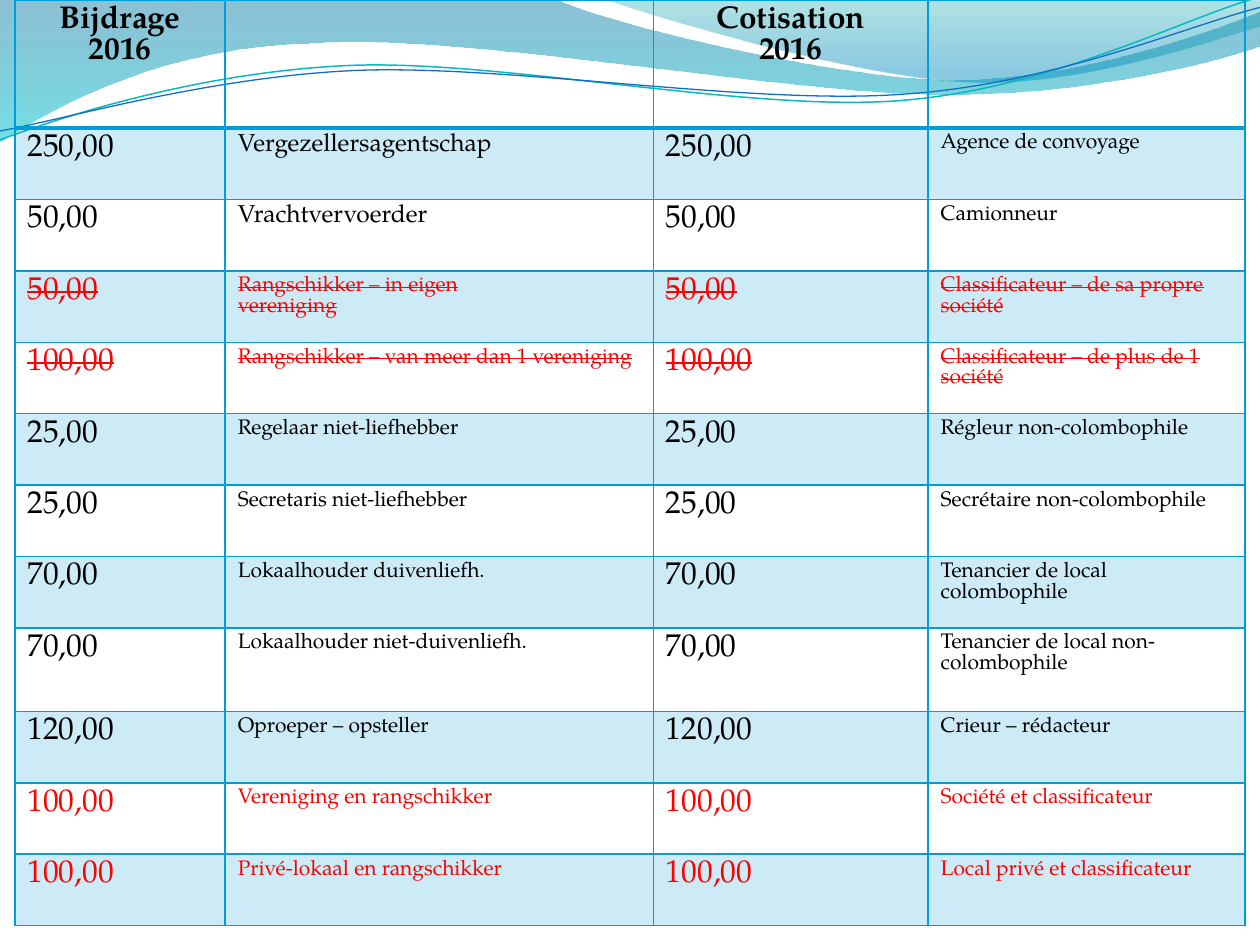
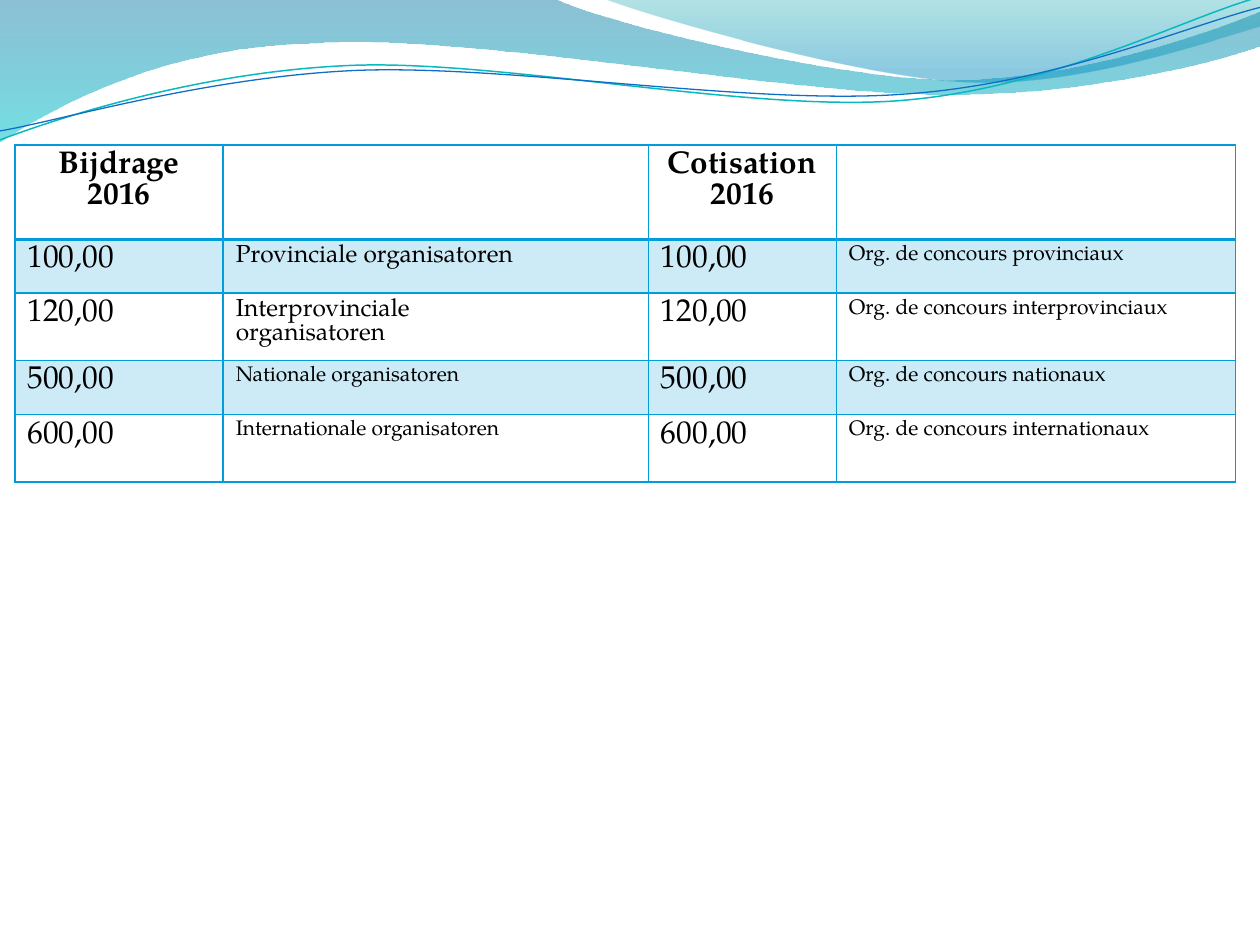
import math
from dataclasses import dataclass

from lxml import etree
from pptx import Presentation
from pptx import util as u
from pptx.dml.color import RGBColor
from pptx.enum import text
from pptx.oxml.ns import qn


@dataclass(frozen=True)
class Theme:
    font: str = "TeX Gyre Pagella"
    ink: str = "000000"
    changed: str = "FF0000"
    grid: str = "009DD9"
    band_opacity: int = 20
    amount_size: int = 18
    lead_size: int = 14
    label_size: int = 12
    leading: float = 0.98
    thin: float = 1
    thick: float = 2


THEME = Theme()
KEPT, STRUCK, ADDED = "kept", "struck", "added"

# Wave outlines in cm: a start, then legs of one point (straight) or three (curve).
# Gradient stops are position, colour and opacity, from top to bottom.
FILLED_WAVES = [
    ((0, 0),
     [[(11.18, -0.03)],
      [(12.09, 0.43), (16.87, 1.6), (19.25, 1.6)],
      [(21.67, 1.6), (24.33, 0.66), (25.4, 0.23)],
      [(25.43, 0.91)],
      [(24.97, 1.12), (22.1, 1.93), (18.95, 1.9)],
      [(15.8, 1.9), (9.7, 0.71), (6.53, 0.86)],
      [(3.28, 0.91), (1.17, 2.11), (-0.03, 2.87)]],
     [(0, "0074A1", 45), (1, "00C6CF", 55)]),
    ((12.17, -0.03),
     [[(12.93, 0.28), (17.32, 1.57), (19.53, 1.65)],
      [(21.74, 1.75), (24.41, 0.81), (25.4, 0.53)],
      [(25.4, 0)]],
     [(0, "00A1A9", 30), (0.8, "008BBF", 45)]),
]
# Thin waves are tilted shapes: start, legs, centre of the tilt, colour and width.
TILT = -2.7
LINE_WAVES = [
    ((0, 2.82),
     [[(1.22, 2.36), (4.01, 1.45), (7.04, 1.32)],
      [(10.03, 1.19), (15.06, 2.26), (18.11, 2.03)],
      [(21.16, 1.8), (23.83, 0.38), (25.35, -0.05)]],
     (12.67, 1.46), "0AB8BF", 0.85),
    ((0, 2.64),
     [[(1.19, 2.44), (4.17, 1.55), (7.19, 1.42)],
      [(10.24, 1.3), (15.16, 2.13), (18.21, 1.9)],
      [(21.23, 1.7), (23.9, 0.53), (25.4, 0.15)]],
     (12.69, 1.5), "0F6FC6", 0.75),
]

HEADINGS = ["Bijdrage\n2016", "", "Cotisation\n2016", ""]
MEMBER_FEES = [
    ("250,00", "Vergezellersagentschap", "Agence de convoyage", KEPT),
    ("50,00", "Vrachtvervoerder", "Camionneur", KEPT),
    ("50,00", "Rangschikker – in eigen\nvereniging",
     "Classificateur – de sa propre société", STRUCK),
    ("100,00", "Rangschikker – van meer dan 1 vereniging",
     "Classificateur – de plus de 1 société", STRUCK),
    ("25,00", "Regelaar niet-liefhebber", "Régleur non-colombophile", KEPT),
    ("25,00", "Secretaris niet-liefhebber", "Secrétaire non-colombophile", KEPT),
    ("70,00", "Lokaalhouder duivenliefh.", "Tenancier de local colombophile", KEPT),
    ("70,00", "Lokaalhouder niet-duivenliefh.",
     "Tenancier de local non-colombophile", KEPT),
    ("120,00", "Oproeper – opsteller", "Crieur – rédacteur", KEPT),
    ("100,00", "Vereniging en rangschikker", "Société et classificateur", ADDED),
    ("100,00", "Privé-lokaal en rangschikker", "Local privé et classificateur", ADDED),
]
ORGANISER_FEES = [
    ("100,00", "Provinciale organisatoren", "Org. de concours provinciaux", KEPT),
    ("120,00", "Interprovinciale\norganisatoren",
     "Org. de concours interprovinciaux", KEPT),
    ("500,00", "Nationale organisatoren", "Org. de concours nationaux", KEPT),
    ("600,00", "Internationale organisatoren", "Org. de concours internationaux", KEPT),
]


def set_opacity(color_element, percent):
    etree.SubElement(color_element, qn("a:alpha"), val=str(percent * 1000))


# Waves
def turn(point, centre, degrees):
    angle = math.radians(degrees)
    x, y = point[0] - centre[0], point[1] - centre[1]
    return (centre[0] + x * math.cos(angle) - y * math.sin(angle),
            centre[1] + x * math.sin(angle) + y * math.cos(angle))


def add_outline(page, start, legs, close):
    """Build a freeform, then make each leg of three points one Bézier curve."""
    builder = page.shapes.build_freeform(u.Cm(start[0]), u.Cm(start[1]))
    points = [(u.Cm(x), u.Cm(y)) for leg in legs for x, y in leg]
    builder.add_line_segments(points, close=close)
    wave = builder.convert_to_shape()
    wave.shadow.inherit = False
    outline = next(wave.element.iter(qn("a:path")))
    segments = iter(outline.findall(qn("a:lnTo")))
    for leg in legs:
        curve, *others = [next(segments) for _ in leg]
        if others:
            curve.tag = qn("a:cubicBezTo")
        for segment in others:
            curve.append(segment[0])
            outline.remove(segment)
    return wave


def add_waves(page, layout):
    """Draw the waves and hand them to the layout that all slides share."""
    waves = []
    for start, legs, stops in FILLED_WAVES:
        wave = add_outline(page, start, legs, True)
        wave.line.fill.background()
        wave.fill.gradient()
        wave.fill.gradient_angle = 270
        for stop, (position, color, _) in zip(wave.fill.gradient_stops, stops):
            stop.position = position
            stop.color.rgb = RGBColor.from_string(color)
        colors = wave.element.spPr.iter(qn("a:srgbClr"))
        for element, (_, _, opacity) in zip(list(colors), stops):
            set_opacity(element, opacity)
        waves.append(wave)
    for start, legs, centre, color, width in LINE_WAVES:
        level_legs = [[turn(point, centre, -TILT) for point in leg] for leg in legs]
        wave = add_outline(page, turn(start, centre, -TILT), level_legs, False)
        wave.rotation = TILT
        wave.fill.background()
        wave.line.color.rgb = RGBColor.from_string(color)
        wave.line.width = u.Pt(width)
        waves.append(wave)
    for placeholder in list(layout.placeholders):
        layout.shapes.element.remove(placeholder.element)
    for wave in waves:
        layout.shapes.element.append(wave.element)


# Fee tables
def set_borders(cell, top, bottom):
    properties = cell._tc.get_or_add_tcPr()
    widths = {"a:lnL": THEME.thin, "a:lnR": THEME.thin, "a:lnT": top, "a:lnB": bottom}
    for index, (tag, width) in enumerate(widths.items()):
        line = etree.Element(qn(tag), w=str(u.Pt(width)))
        fill = etree.SubElement(line, qn("a:solidFill"))
        etree.SubElement(fill, qn("a:srgbClr"), val=THEME.grid)
        properties.insert(index, line)


def shade(cell, banded):
    if not banded:
        cell.fill.background()
        return
    cell.fill.solid()
    cell.fill.fore_color.rgb = RGBColor.from_string(THEME.grid)
    set_opacity(next(cell._tc.tcPr.iter(qn("a:srgbClr"))), THEME.band_opacity)


def write(cell, words, size, state=KEPT, heading=False):
    cell.text = words
    for para in cell.text_frame.paragraphs:
        para.line_spacing = u.Pt(size * THEME.leading)
        para.alignment = text.PP_ALIGN.CENTER if heading else text.PP_ALIGN.LEFT
        font = para.font
        font.name, font.size, font.bold = THEME.font, u.Pt(size), heading
        font.color.rgb = RGBColor.from_string(THEME.ink if state == KEPT else THEME.changed)
        if state == STRUCK:
            para._p.pPr.find(qn("a:defRPr")).set("strike", "sngStrike")


def add_fee_table(page, left, top, widths, heights, fees):
    frame = page.shapes.add_table(
        len(heights), len(widths), u.Cm(left), u.Cm(top),
        u.Cm(sum(widths)), u.Cm(sum(heights)))
    table = frame.table
    table.first_row = table.horz_banding = False
    for column, width in zip(table.columns, widths):
        column.width = u.Cm(width)
    for row, height in zip(table.rows, heights):
        row.height = u.Cm(height)

    for column, heading in enumerate(HEADINGS):
        write(table.cell(0, column), heading, THEME.amount_size, heading=True)
    for row, (amount, dutch, french, state) in enumerate(fees, start=1):
        dutch_size = THEME.lead_size if row <= 2 else THEME.label_size
        entries = [(amount, THEME.amount_size), (dutch, dutch_size),
                   (amount, THEME.amount_size), (french, THEME.label_size)]
        for column, (words, size) in enumerate(entries):
            write(table.cell(row, column), words, size, state)

    for row in range(len(heights)):
        for column in range(len(widths)):
            cell = table.cell(row, column)
            shade(cell, row % 2 == 1)
            set_borders(cell, THEME.thick if row == 1 else THEME.thin,
                        THEME.thick if row == 0 else THEME.thin)


def main():
    deck = Presentation()
    deck.slide_width, deck.slide_height = u.Cm(25.4), u.Cm(19.05)
    layout = deck.slide_layouts[6]

    # Member fees
    page = deck.slides.add_slide(layout)
    add_waves(page, layout)
    add_fee_table(page, 0.3, 0, [4.24, 8.63, 5.54, 6.39],
                  [2.58] + [1.44] * 7 + [1.68] + [1.44] * 3, MEMBER_FEES)

    # Organiser fees
    page = deck.slides.add_slide(layout)
    add_fee_table(page, 0.3, 2.92, [4.2, 8.57, 3.79, 8.05],
                  [1.9] + [1.09, 1.36] * 2, ORGANISER_FEES)

    deck.save("out.pptx")


if __name__ == "__main__":
    main()
